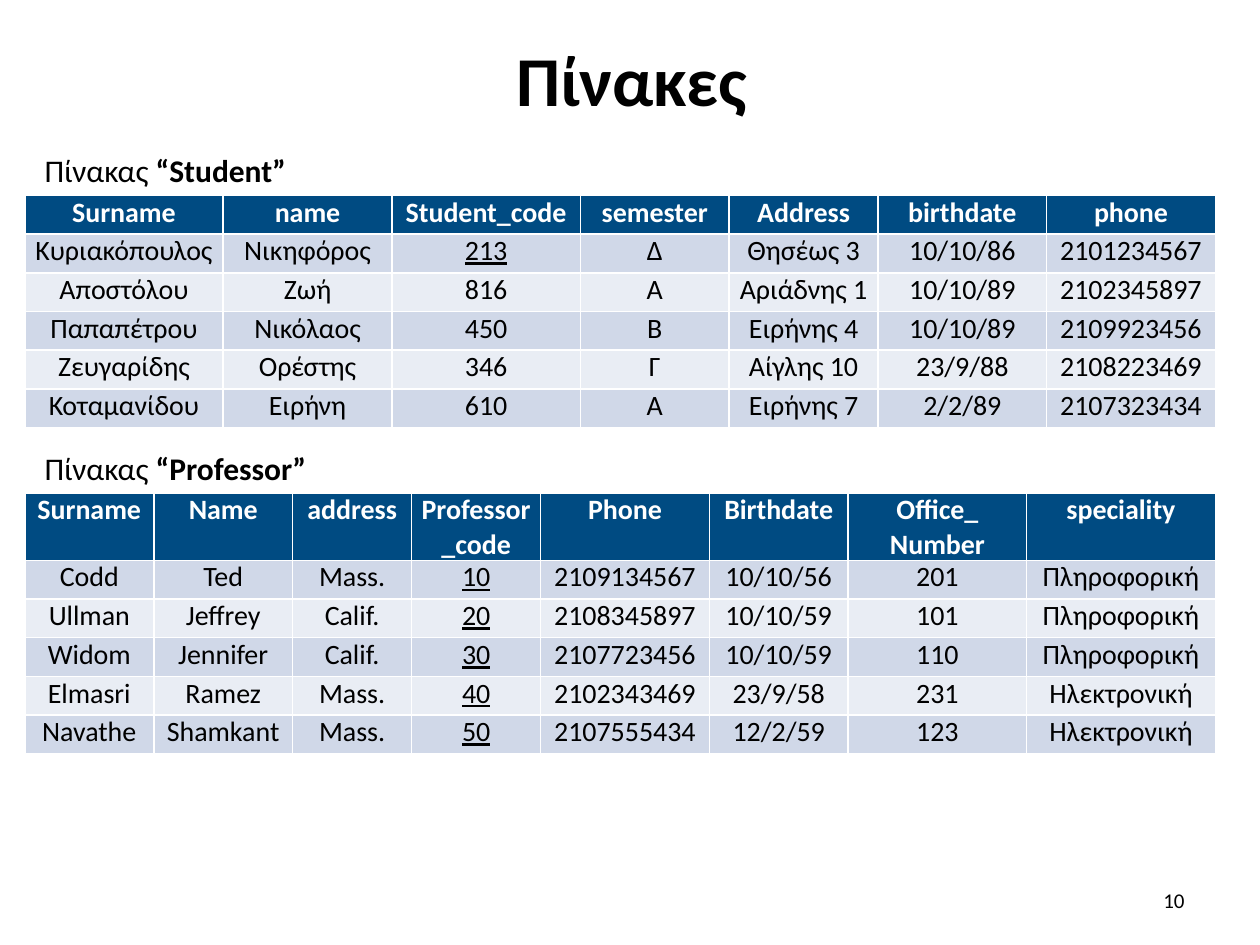
from dataclasses import dataclass

from pptx import Presentation
from pptx.dml.color import RGBColor
from pptx.enum.text import MSO_ANCHOR, PP_ALIGN
from pptx.util import Cm, Pt

LEFT, CENTER, RIGHT = PP_ALIGN.LEFT, PP_ALIGN.CENTER, PP_ALIGN.RIGHT
MIDDLE = MSO_ANCHOR.MIDDLE


@dataclass(frozen=True)
class Theme:
    """Hold the colours, font and type sizes of the slide."""
    font: str = "Calibri"
    ink: str = "000000"
    white: str = "FFFFFF"
    head: str = "004B82"
    bands: tuple = ("D0D8E8", "E9EDF4")
    title: int = 40
    label: int = 18
    cell: int = 16
    page: int = 12


THEME = Theme()

STUDENT = (
    ("Surname", "name", "Student_code", "semester", "Address", "birthdate", "phone"),
    ("Κυριακόπουλος", "Νικηφόρος", "213", "Δ", "Θησέως 3", "10/10/86", "2101234567"),
    ("Αποστόλου", "Ζωή", "816", "Α", "Αριάδνης 1", "10/10/89", "2102345897"),
    ("Παπαπέτρου", "Νικόλαος", "450", "Β", "Ειρήνης 4", "10/10/89", "2109923456"),
    ("Ζευγαρίδης", "Ορέστης", "346", "Γ", "Αίγλης 10", "23/9/88", "2108223469"),
    ("Κοταμανίδου", "Ειρήνη", "610", "Α", "Ειρήνης 7", "2/2/89", "2107323434"),
)
PROFESSOR = (
    ("Surname", "Name", "address", "Professor_code", "Phone", "Birthdate",
     "Office_\nNumber", "speciality"),
    ("Codd", "Ted", "Mass.", "10", "2109134567", "10/10/56", "201", "Πληροφορική"),
    ("Ullman", "Jeffrey", "Calif.", "20", "2108345897", "10/10/59", "101", "Πληροφορική"),
    ("Widom", "Jennifer", "Calif.", "30", "2107723456", "10/10/59", "110", "Πληροφορική"),
    ("Elmasri", "Ramez", "Mass.", "40", "2102343469", "23/9/58", "231", "Ηλεκτρονική"),
    ("Navathe", "Shamkant", "Mass.", "50", "2107555434", "12/2/59", "123", "Ηλεκτρονική"),
)
STUDENT_COLS = (4, 3.4, 3.8, 3, 3, 3.4, 3.4)
PROFESSOR_COLS = (2.6, 2.8, 2.4, 2.6, 3.4, 2.8, 3.6, 3.8)
STUDENT_KEYS = {"213"}
PROFESSOR_KEYS = {row[3] for row in PROFESSOR[1:]}


def style(para, size, align=LEFT, color=THEME.ink, bold=None):
    """Set the font and alignment of a paragraph."""
    para.alignment = align
    font = para.font
    font.name, font.size, font.bold = THEME.font, Pt(size), bold
    font.color.rgb = RGBColor.from_string(color)


def add_title(slide, text, left, top, width, height):
    """Fill and move the title placeholder."""
    title = slide.shapes.title
    title.left, title.top, title.width, title.height = map(Cm, (left, top, width, height))
    title.text_frame.text = text
    title.text_frame.vertical_anchor = MIDDLE
    style(title.text_frame.paragraphs[0], THEME.title, CENTER, bold=True)


def fill_cell(cell, text, fill, color, bold, line):
    """Write and colour one table cell."""
    cell.text = text
    cell.margin_left = cell.margin_right = Cm(0.18)
    cell.margin_top = cell.margin_bottom = 0
    cell.fill.solid()
    cell.fill.fore_color.rgb = RGBColor.from_string(fill)
    for para in cell.text_frame.paragraphs:
        style(para, THEME.cell, CENTER, color, bold)
        if line:
            para.font.underline = True


def add_grid(slide, name, rows, cols, keys, left, top):
    """Place a caption with its table below."""
    box = slide.shapes.add_textbox(Cm(left), Cm(top), Cm(6), Cm(1))
    frame = box.text_frame
    frame.word_wrap = False
    frame.margin_left = Cm(0.4)
    para = frame.paragraphs[0]
    style(para, THEME.label)
    para.add_run().text = "Πίνακας "
    run = para.add_run()
    run.text = f"“{name}”"
    run.font.bold = True

    high = 0.78
    table = slide.shapes.add_table(
        len(rows), len(cols), Cm(left), Cm(top + 1.02),
        Cm(sum(cols)), Cm(high * len(rows))).table
    for col, width in zip(table.columns, cols):
        col.width = Cm(width)
    for r, row in enumerate(rows):
        table.rows[r].height = Cm(high)
        head = r == 0
        fill = THEME.head if head else THEME.bands[(r - 1) % 2]
        color = THEME.white if head else THEME.ink
        for c, text in enumerate(row):
            fill_cell(table.cell(r, c), text, fill, color, head, text in keys)


def add_page(slide, text, left, top, width, height):
    """Place the page number."""
    box = slide.shapes.add_textbox(*map(Cm, (left, top, width, height)))
    frame = box.text_frame
    frame.word_wrap = True
    frame.vertical_anchor = MIDDLE
    frame.text = text
    style(frame.paragraphs[0], THEME.page, RIGHT)


def main():
    """Build and save the slide."""
    deck = Presentation()
    deck.slide_width, deck.slide_height = Cm(25.4), Cm(19.05)
    slide = deck.slides.add_slide(deck.slide_layouts[5])
    add_title(slide, "Πίνακες", 1.3, 0.33, 22.86, 2.5)
    add_grid(slide, "Student", STUDENT, STUDENT_COLS, STUDENT_KEYS, 0.5, 2.92)
    add_grid(slide, "Professor", PROFESSOR, PROFESSOR_COLS, PROFESSOR_KEYS, 0.5, 8.92)
    add_page(slide, "10", 18.2, 17.65, 5.93, 1.01)
    deck.save("out.pptx")


if __name__ == "__main__":
    main()
